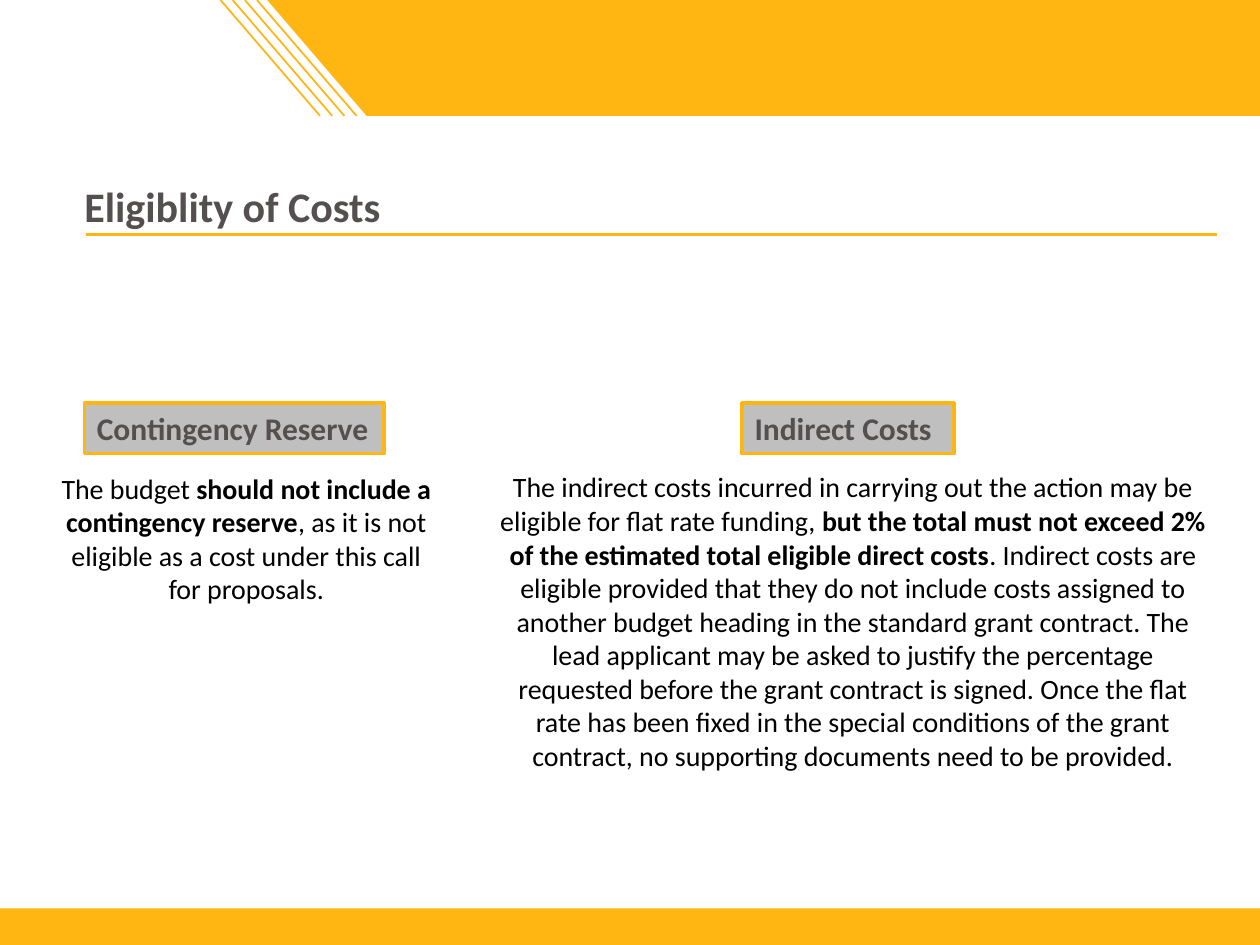
from dataclasses import dataclass

from lxml import etree
from pptx import Presentation
from pptx import util as u
from pptx.dml.color import RGBColor
from pptx.enum import shapes, text
from pptx.oxml import ns
from pptx.shapes.autoshape import Shape
from pptx.slide import Slide
from pptx.text.text import TextFrame


@dataclass(frozen=True)
class Theme:
    font: str = "Calibri"
    accent: RGBColor = RGBColor(0xFF, 0xB6, 0x12)
    heading: RGBColor = RGBColor(0x53, 0x50, 0x4F)
    label_fill: RGBColor = RGBColor(0xBF, 0xBF, 0xBF)
    body: RGBColor = RGBColor(0, 0, 0)
    title_size: int = 24
    label_size: int = 18
    body_size: int = 16


@dataclass(frozen=True)
class Box:
    left: float
    top: float
    width: float
    height: float

    def emu(self) -> list[u.Length]:
        return [u.Inches(v) for v in (self.left, self.top, self.width, self.height)]


@dataclass(frozen=True)
class Phrase:
    wording: str
    bold: bool = False


@dataclass(frozen=True)
class CostTopic:
    label: str
    label_box: Box
    label_wraps: bool
    body_box: Box
    phrases: tuple[Phrase, ...]


THEME = Theme()
SLIDE_W, SLIDE_H = 10, 7.5
BANNER_H = 0.92
BANNER_SLANT = 0.79
STRIPE_COUNT, STRIPE_FIRST, STRIPE_LAST = 4, 1.75, 2.04

TOPICS = (
    CostTopic(
        "Contingency Reserve", Box(0.67, 3.2, 2.38, 0.4), False,
        Box(0.32, 3.69, 3.27, 1.18),
        (
            Phrase("The budget "),
            Phrase("should not include a contingency reserve", True),
            Phrase(", as it is not eligible as a cost under this call for proposals."),
        ),
    ),
    CostTopic(
        "Indirect Costs", Box(5.89, 3.2, 1.68, 0.4), True,
        Box(3.83, 3.68, 5.88, 2.79),
        (
            Phrase("The indirect costs incurred in carrying out the action may be "
                   "eligible for flat rate funding, "),
            Phrase("but the total must not exceed 2% of the estimated total "
                   "eligible direct costs", True),
            Phrase(". Indirect costs are eligible provided that they do not include "
                   "costs assigned to another budget heading in the standard grant "
                   "contract. The lead applicant may be asked to justify the "
                   "percentage requested before the grant contract is signed. Once "
                   "the flat rate has been fixed in the special conditions of the "
                   "grant contract, no supporting documents need to be provided."),
        ),
    ),
)


def write(frame: TextFrame, phrases: tuple[Phrase, ...], size: int,
          color: RGBColor, align: text.PP_ALIGN, anchor: text.MSO_ANCHOR,
          wrap: bool = True) -> None:
    frame.word_wrap = wrap
    frame.auto_size = text.MSO_AUTO_SIZE.NONE
    frame.vertical_anchor = anchor
    frame.margin_left = frame.margin_right = u.Inches(0.1)
    frame.margin_top = frame.margin_bottom = u.Inches(0.05)
    paragraph = frame.paragraphs[0]
    paragraph.alignment = align
    for phrase in phrases:
        run = paragraph.add_run()
        run.text = phrase.wording
        run.font.name = THEME.font
        run.font.size = u.Pt(size)
        run.font.bold = phrase.bold
        run.font.color.rgb = color


def paint_accent(shape: Shape) -> None:
    shape.shadow.inherit = False
    shape.fill.solid()
    shape.fill.fore_color.rgb = THEME.accent
    shape.line.fill.background()


def draw_line(slide: Slide, x1: float, y1: float, x2: float, y2: float,
              width: float) -> None:
    line = slide.shapes.add_connector(
        shapes.MSO_CONNECTOR.STRAIGHT, *(u.Inches(v) for v in (x1, y1, x2, y2)))
    line.line.color.rgb = THEME.accent
    line.line.width = u.Pt(width)
    etree.SubElement(line._element.spPr, ns.qn("a:effectLst"))


def draw_frame(slide: Slide) -> None:
    # Slanted banner
    left = 2.12
    outline = slide.shapes.build_freeform(u.Inches(left), 0)
    corners = ((SLIDE_W, 0), (SLIDE_W, BANNER_H), (left + BANNER_SLANT, BANNER_H))
    outline.add_line_segments([(u.Inches(x), u.Inches(y)) for x, y in corners])
    paint_accent(outline.convert_to_shape())

    # Footer bar
    footer_top = 7.21
    footer = Box(0, footer_top, SLIDE_W, SLIDE_H - footer_top)
    paint_accent(slide.shapes.add_shape(shapes.MSO_SHAPE.RECTANGLE, *footer.emu()))

    # Title rule and banner stripes
    draw_line(slide, 0.68, 1.86, 9.66, 1.86, 1.5)
    gap = (STRIPE_LAST - STRIPE_FIRST) / (STRIPE_COUNT - 1)
    for i in range(STRIPE_COUNT):
        x = STRIPE_FIRST + i * gap
        draw_line(slide, x, 0, x + BANNER_SLANT, BANNER_H, 1)


def draw_title(slide: Slide, wording: str) -> None:
    title = slide.shapes.title
    title.left, title.top, title.width, title.height = Box(0.57, 1.05, 9.15, 0.83).emu()
    write(title.text_frame, (Phrase(wording, True),), THEME.title_size,
          THEME.heading, text.PP_ALIGN.LEFT, text.MSO_ANCHOR.BOTTOM)


def draw_topic(slide: Slide, topic: CostTopic) -> None:
    label = slide.shapes.add_shape(shapes.MSO_SHAPE.RECTANGLE, *topic.label_box.emu())
    label.shadow.inherit = False
    label.fill.solid()
    label.fill.fore_color.rgb = THEME.label_fill
    label.line.color.rgb = THEME.accent
    label.line.width = u.Pt(2)
    write(label.text_frame, (Phrase(topic.label, True),), THEME.label_size,
          THEME.heading, text.PP_ALIGN.LEFT, text.MSO_ANCHOR.TOP, topic.label_wraps)

    body = slide.shapes.add_textbox(*topic.body_box.emu())
    write(body.text_frame, topic.phrases, THEME.body_size,
          THEME.body, text.PP_ALIGN.CENTER, text.MSO_ANCHOR.TOP)


def main() -> None:
    deck = Presentation()
    deck.slide_width, deck.slide_height = u.Inches(SLIDE_W), u.Inches(SLIDE_H)
    slide = deck.slides.add_slide(deck.slide_layouts[5])
    draw_frame(slide)
    draw_title(slide, "Eligiblity of Costs")
    for topic in TOPICS:
        draw_topic(slide, topic)
    deck.save("out.pptx")


if __name__ == "__main__":
    main()
